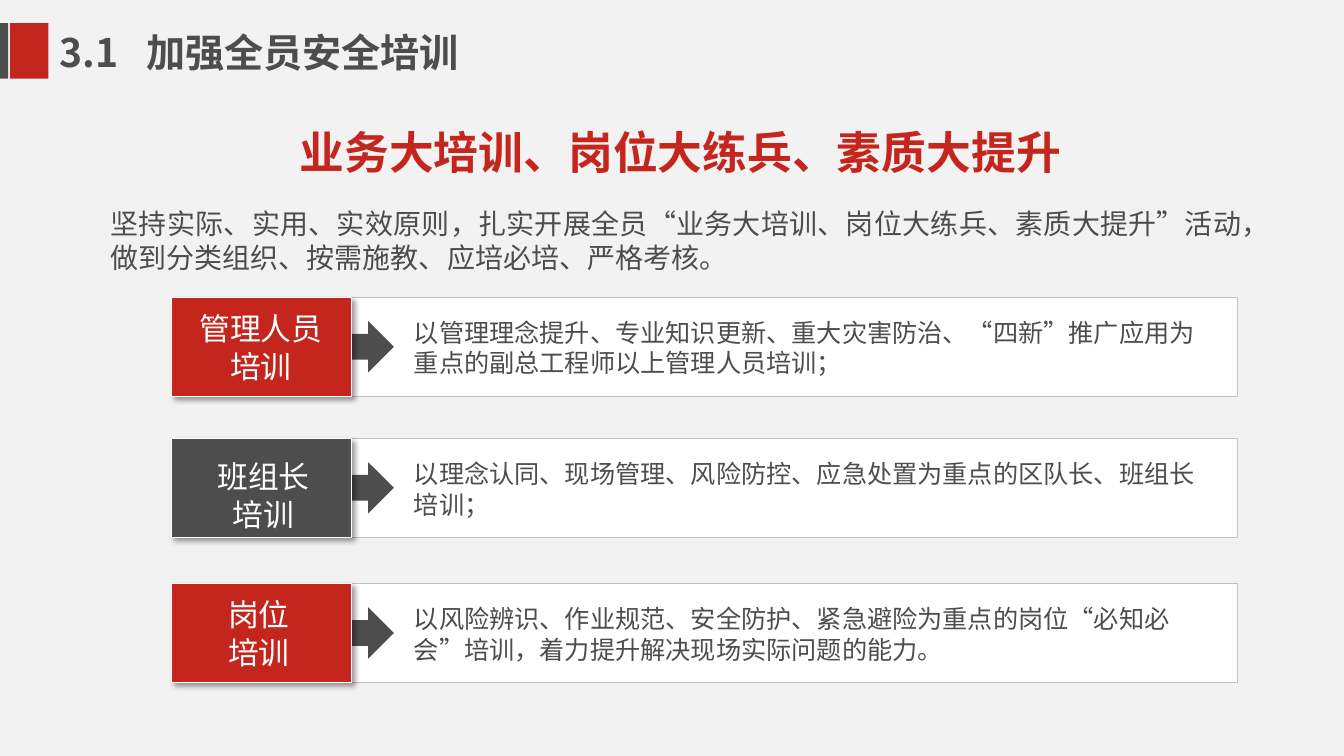
from lxml import etree
from pptx import Presentation
from pptx.dml.color import RGBColor
from pptx.enum.lang import MSO_LANGUAGE_ID
from pptx.enum.shapes import MSO_SHAPE
from pptx.enum.text import MSO_ANCHOR, MSO_AUTO_SIZE, PP_ALIGN
from pptx.oxml.ns import qn
from pptx.util import Inches, Pt

RECTANGLE, RIGHT_ARROW = MSO_SHAPE.RECTANGLE, MSO_SHAPE.RIGHT_ARROW
LEFT, CENTER, JUSTIFY = PP_ALIGN.LEFT, PP_ALIGN.CENTER, PP_ALIGN.JUSTIFY
TOP, MIDDLE = MSO_ANCHOR.TOP, MSO_ANCHOR.MIDDLE
NO_AUTOFIT = MSO_AUTO_SIZE.NONE
CHINESE = MSO_LANGUAGE_ID.SIMPLIFIED_CHINESE

RED = RGBColor(0xC4, 0x26, 0x1D)
GRAY = RGBColor(0x4D, 0x4D, 0x4D)
WHITE = RGBColor(0xFF, 0xFF, 0xFF)
BORDER = RGBColor(0xC2, 0xC1, 0xC1)
BACKGROUND = RGBColor(0xF2, 0xF2, 0xF2)

FONT = "Noto Sans CJK SC"
LINE_HEIGHT = 1.22
CELL = 0.1  # side of a grid cell in inches
COLUMNS, ROWS = 133.4, 75

# Card top row, block colour, label, label frame (column, row offset, width), description
CARDS = [
    (29.5, RED, "管理人员培训", (18.6, 0.7, 14.6),
     "以管理理念提升、专业知识更新、重大灾害防治、“四新”推广应用为重点的副总工程师以上管理人员培训；"),
    (43.5, GRAY, "班组长培训", (19.6, 1.4, 13.1),
     "以理念认同、现场管理、风险防控、应急处置为重点的区队长、班组长培训；"),
    (57.9, RED, "岗位培训", (20.4, 0.7, 10.6),
     "以风险辨识、作业规范、安全防护、紧急避险为重点的岗位“必知必会”培训，着力提升解决现场实际问题的能力。"),
]
CARD_HEIGHT = 9.8


def grid(*cells):
    return [Inches(cell * CELL) for cell in cells]


def write(shape, text, size=18, color=GRAY, bold=False, align=LEFT,
          anchor=TOP, wrap=True, tab=None):
    frame = shape.text_frame
    frame.word_wrap = wrap
    frame.auto_size = NO_AUTOFIT
    frame.vertical_anchor = anchor
    paragraph = frame.paragraphs[0]
    paragraph.alignment = align
    paragraph.line_spacing = Pt(round(size * LINE_HEIGHT, 1))
    if tab:
        tabs = etree.SubElement(paragraph._p.get_or_add_pPr(), qn("a:tabLst"))
        etree.SubElement(tabs, qn("a:tab"), pos=str(grid(tab)[0]), algn="l")
    run = paragraph.add_run()
    run.text = text
    font = run.font
    font.name, font.size, font.bold = FONT, Pt(size), bold
    font.color.rgb = color
    font.language_id = CHINESE
    east_asian = etree.Element(qn("a:ea"), typeface=FONT)
    run._r.rPr.find(qn("a:latin")).addnext(east_asian)


class TrainingSlide:
    def __init__(self, presentation):
        self.slide = presentation.slides.add_slide(presentation.slide_layouts[5])
        fill = self.slide.background.fill
        fill.solid()
        fill.fore_color.rgb = BACKGROUND

    def title(self, frame, text, **style):
        shape = self.slide.shapes.title
        shape.left, shape.top, shape.width, shape.height = grid(*frame)
        write(shape, text, **style)

    def text(self, frame, text, **style):
        write(self.slide.shapes.add_textbox(*grid(*frame)), text, **style)

    def block(self, frame, fill, kind=RECTANGLE, line=None, group=None):
        owner = group or self.slide
        shape = owner.shapes.add_shape(kind, *grid(*frame))
        shape.shadow.inherit = False
        shape.fill.solid()
        shape.fill.fore_color.rgb = fill
        if line is None:
            shape.line.fill.background()
        else:
            shape.line.color.rgb = line
            shape.line.width = Pt(0.75)
        return shape

    def cast_shadow(self, shape):
        effects = shape._element.spPr.find(qn("a:effectLst"))
        shadow = etree.SubElement(
            effects, qn("a:outerShdw"), blurRad=str(Pt(4)), dist=str(Pt(3)),
            dir=str(45 * 60000), algn="tl", rotWithShape="0")
        color = etree.SubElement(shadow, qn("a:srgbClr"), val="000000")
        etree.SubElement(color, qn("a:alpha"), val="40000")

    def card(self, top, color, label, label_frame, description):
        self.block((34.3, top, 88.5, CARD_HEIGHT), WHITE, line=BORDER)
        self.block((32.8, top + 2.35, 6.3, 5.1), GRAY, kind=RIGHT_ARROW)
        block = self.block((17, top, 17.9, CARD_HEIGHT), color, line=WHITE)
        self.cast_shadow(block)
        left, offset, width = label_frame
        self.text((left, top + offset, width, 8.4), label,
                  size=22, color=WHITE, align=CENTER)
        self.text((40.1, top + 1.4, 80.4, 7.1), description)


def main():
    presentation = Presentation()
    presentation.slide_width, presentation.slide_height = grid(COLUMNS, ROWS)
    page = TrainingSlide(presentation)

    # Title with its two bars
    page.title((4.9, 2.3, 49.2, 5.7), "3.1\t加强全员安全培训",
               size=28, bold=True, anchor=MIDDLE, tab=8.6)
    bars = page.slide.shapes.add_group_shape()
    page.block((0, 2.3, 0.8, 5.5), GRAY, group=bars)
    page.block((1, 2.3, 3.8, 5.5), RED, group=bars)

    # Slogan and introduction
    page.text((28.4, 11.8, 78.3, 6.4), "业务大培训、岗位大练兵、素质大提升",
              size=32, color=RED, bold=True, align=CENTER, wrap=False)
    page.text((10, 19.9, 114.2, 7.7),
              "坚持实际、实用、实效原则，扎实开展全员“业务大培训、岗位大练兵、素质大提升”活动，"
              "做到分类组织、按需施教、应培必培、严格考核。",
              size=20, align=JUSTIFY)

    # Training cards
    for card in CARDS:
        page.card(*card)

    presentation.save("out.pptx")


if __name__ == "__main__":
    main()
